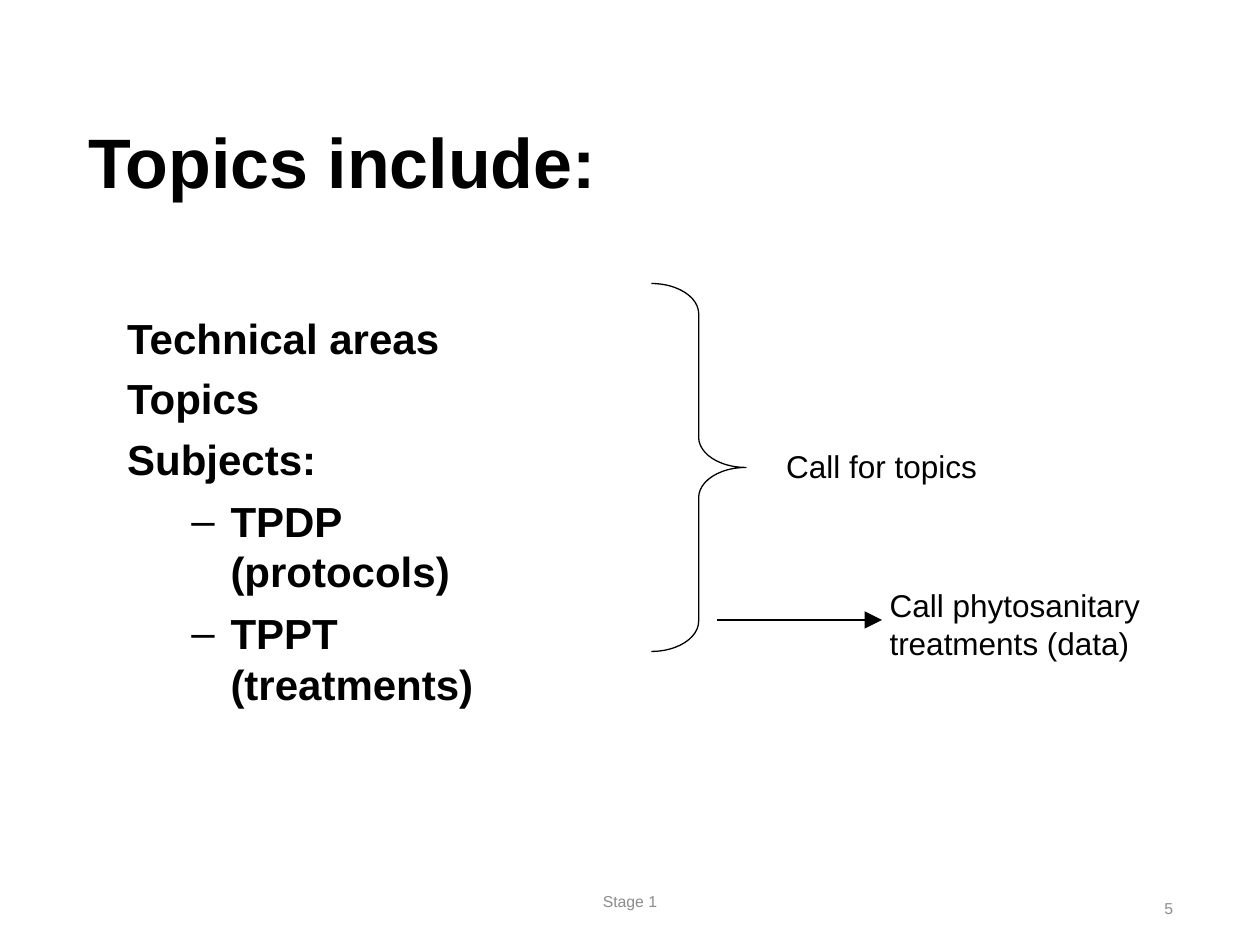
from dataclasses import dataclass

from lxml.etree import SubElement
from pptx import Presentation
from pptx.dml.color import RGBColor
from pptx.enum.shapes import MSO_CONNECTOR, MSO_SHAPE
from pptx.enum.text import MSO_ANCHOR as Anchor, MSO_AUTO_SIZE, PP_ALIGN as Align
from pptx.oxml.ns import qn
from pptx.util import Inches, Pt


@dataclass(frozen=True)
class Theme:
    font: str = "Arial"
    ink: RGBColor = RGBColor(0, 0, 0)
    muted: RGBColor = RGBColor(0x8C, 0x8C, 0x8C)
    title: int = 40
    body: int = 24
    label: int = 18
    footer: int = 9
    line: float = 0.75


THEME = Theme()
WIDTH, HEIGHT = 10, 7.5
TITLE = "Topics include:"
TOPICS = ["Technical areas", "Topics", "Subjects:"]
PANELS = ["TPDP (protocols)", "TPPT (treatments)"]
CALLS = [
    ("Call for topics", (6.23, 3.55, 1.54, 0.31)),
    ("Call phytosanitary treatments (data)", (7.05, 4.65, 2.01, 0.61)),
]
FOOTER, PAGE = "Stage 1", "5"

MARGIN = 0.69
FOOTER_TOP, FOOTER_HEIGHT = 6.95, 0.4
FOOTER_WIDTH, PAGE_WIDTH = 3.38, 2.25
BODY_BOX = (1, 2.4, 3.76, 2.46)
BODY_RIGHT_INSET = 0.5
BRACE_BOX = (5.17, 2.25, 0.75, 2.92)
BRACE_CURVE = 0.32
ARROW_START, ARROW_END, ARROW_Y = 5.69, 7, 4.92
TEXT_INDENT, PANEL_INDENT, HANGING = 0.01, 0.83, 0.31


def style(paragraph, size, color=THEME.ink, bold=False, align=Align.LEFT):
    paragraph.alignment = align
    font = paragraph.font
    font.name, font.size, font.bold = THEME.font, Pt(size), bold
    font.color.rgb = color


def indent(paragraph, left, first=0):
    properties = paragraph._p.get_or_add_pPr()
    properties.set("marL", str(Inches(left)))
    properties.set("indent", str(Inches(first)))
    return properties


def prepare(frame, anchor=Anchor.TOP):
    frame.word_wrap = True
    frame.auto_size = MSO_AUTO_SIZE.NONE
    frame.vertical_anchor = anchor
    frame.margin_left = frame.margin_right = frame.margin_top = frame.margin_bottom = 0
    return frame


def add_text(slide, text, box, size, color=THEME.ink, align=Align.LEFT, anchor=Anchor.TOP):
    frame = prepare(slide.shapes.add_textbox(*map(Inches, box)).text_frame, anchor)
    paragraph = frame.paragraphs[0]
    paragraph.text = text
    style(paragraph, size, color, align=align)
    return paragraph


def add_title(slide):
    title = slide.shapes.title
    title.left, title.top = Inches(MARGIN), Inches(0.75)
    title.width, title.height = Inches(WIDTH - 2 * MARGIN), Inches(1.05)
    paragraph = prepare(title.text_frame, Anchor.MIDDLE).paragraphs[0]
    paragraph.text = TITLE
    indent(paragraph, TEXT_INDENT)
    style(paragraph, THEME.title, bold=True)


def add_topics(slide):
    frame = prepare(slide.shapes.add_textbox(*map(Inches, BODY_BOX)).text_frame)
    frame.margin_right = Inches(BODY_RIGHT_INSET)
    for index, text in enumerate(TOPICS + PANELS):
        paragraph = frame.add_paragraph() if index else frame.paragraphs[0]
        paragraph.text = text
        if index < len(TOPICS):
            indent(paragraph, TEXT_INDENT)
            paragraph.line_spacing = 1.2
        else:
            properties = indent(paragraph, PANEL_INDENT, -HANGING)
            paragraph.space_before = Pt(6.7)
            SubElement(properties, qn("a:buFont"), typeface=THEME.font)
            SubElement(properties, qn("a:buChar"), char="–")
        style(paragraph, THEME.body, bold=True)


def add_brace(slide):
    brace = slide.shapes.add_shape(MSO_SHAPE.RIGHT_BRACE, *map(Inches, BRACE_BOX))
    brace.adjustments[0] = BRACE_CURVE
    brace.shadow.inherit = False
    brace.fill.background()
    brace.line.color.rgb = THEME.ink
    brace.line.width = Pt(THEME.line)


def add_arrow(slide):
    ends = map(Inches, (ARROW_START, ARROW_Y, ARROW_END, ARROW_Y))
    arrow = slide.shapes.add_connector(MSO_CONNECTOR.STRAIGHT, *ends)
    arrow.line.color.rgb = THEME.ink
    arrow.line.width = Pt(THEME.line)
    SubElement(arrow.line._get_or_add_ln(), qn("a:tailEnd"), type="triangle", w="lg", len="lg")
    SubElement(arrow._element.spPr, qn("a:effectLst"))


def add_footer(slide):
    center_left = (WIDTH - FOOTER_WIDTH) / 2
    page_left = WIDTH - MARGIN - PAGE_WIDTH
    add_text(slide, FOOTER, (center_left, FOOTER_TOP, FOOTER_WIDTH, FOOTER_HEIGHT),
             THEME.footer, THEME.muted, Align.CENTER, Anchor.MIDDLE)
    page = add_text(slide, PAGE, (page_left, FOOTER_TOP, PAGE_WIDTH, FOOTER_HEIGHT),
                    THEME.footer, THEME.muted, Align.RIGHT, Anchor.MIDDLE)
    page.line_spacing = Pt(19.2)


def main():
    presentation = Presentation()
    presentation.slide_width, presentation.slide_height = Inches(WIDTH), Inches(HEIGHT)
    slide = presentation.slides.add_slide(presentation.slide_layouts[5])
    add_title(slide)
    add_topics(slide)
    add_brace(slide)
    add_arrow(slide)
    for text, box in CALLS:
        indent(add_text(slide, text, box, THEME.label), TEXT_INDENT)
    add_footer(slide)
    presentation.save("out.pptx")


if __name__ == "__main__":
    main()
